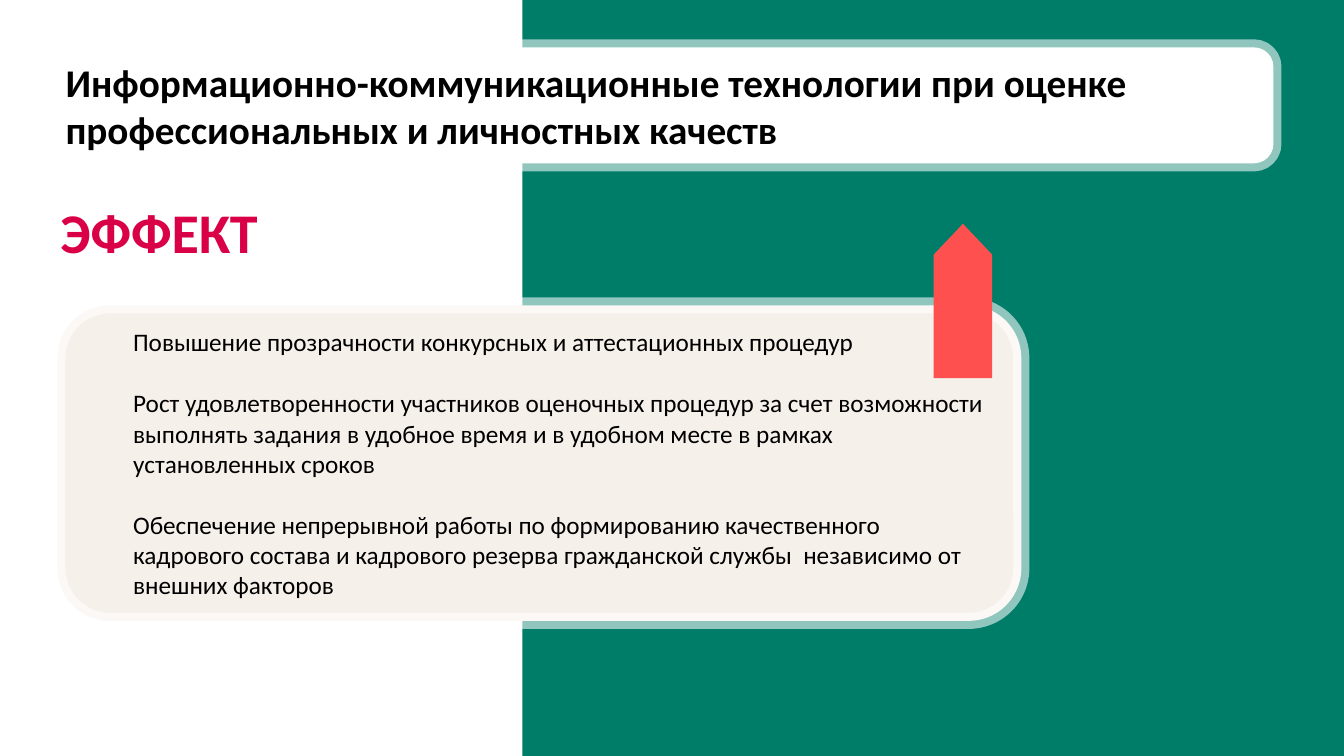
import pptx
import pptx.util
import pptx.dml.color
import pptx.enum.shapes
import pptx.enum.text
from lxml import etree

# Content
TITLE = ("Информационно-коммуникационные технологии при оценке "
         "профессиональных и личностных качеств")
LABEL = "ЭФФЕКТ"
EFFECTS = [
    "Повышение прозрачности конкурсных и аттестационных процедур",
    "Рост удовлетворенности участников оценочных процедур за счет возможности "
    "выполнять задания в удобное время и в удобном месте в рамках установленных сроков",
    "Обеспечение непрерывной работы по формированию качественного кадрового состава "
    "и кадрового резерва гражданской службы  независимо от внешних факторов",
]
HEX = {"green": "007D69", "cream": "F6F0EA", "white": "FFFFFF",
       "black": "000000", "pink": "D90048", "red": "FF5050"}
FONT = "Calibri"

# Boxes in inches: left, top, width, height
WIDE, HIGH = 13.33, 7.5
SPLIT = 5.18
PANEL = (SPLIT, 0, WIDE - SPLIT, HIGH)
CARD = (0.57, 3.03, 9.56, 3.13)
HEAD = (0.5, 0.47, 12.13, 1.15)
TAG = (0.5, 1.91, 2.18, 0.77)
ARROW = (9.26, 2.22, 0.58, 1.53)
PAD = 0.15
INDENT = 0.75

Kind = pptx.enum.shapes.MSO_SHAPE
Text = pptx.enum.text


def color(name):
    return pptx.dml.color.RGBColor.from_string(HEX[name])


def place(box):
    return [pptx.util.Inches(n) for n in box]


def inset(box, left, right):
    return box[0] + left, box[1], box[2] - left - right, box[3]


def draw(kind, box, fill, edge=False):
    shape = slide.shapes.add_shape(kind, *place(box))
    shape.shadow.inherit = False
    shape.fill.solid()
    shape.fill.fore_color.rgb = color(fill)
    if edge:
        shape.line.width = pptx.util.Pt(11.5)
        shape.line.color.rgb = color("white")
        tint = shape.line.fill._xPr.find(".//" + pptx.oxml.ns.qn("a:srgbClr"))
        etree.SubElement(tint, pptx.oxml.ns.qn("a:alpha"), val="56000")
    else:
        shape.line.fill.background()
    return shape


def write(shape, box, lines, size, ink, bold=False, gap=0, wrap=True):
    shape.left, shape.top, shape.width, shape.height = place(box)
    frame = shape.text_frame
    frame.text = "\n".join(lines)
    frame.word_wrap = wrap
    frame.auto_size = Text.MSO_AUTO_SIZE.NONE
    frame.vertical_anchor = Text.MSO_ANCHOR.MIDDLE
    frame.margin_left = frame.margin_right = 0
    for i, par in enumerate(frame.paragraphs):
        par.alignment = Text.PP_ALIGN.LEFT
        par.space_before = pptx.util.Pt(gap if i else 0)
        par.font.name, par.font.size = FONT, pptx.util.Pt(size)
        par.font.bold, par.font.color.rgb = bold, color(ink)
        props = par._p.get_or_add_pPr()
        props.set("marL", "0")
        props.set("indent", "0")
        props.insert_element_before(
            pptx.oxml.parse_xml('<a:buNone %s/>' % pptx.oxml.ns.nsdecls("a")),
            "a:tabLst", "a:defRPr", "a:extLst")


deck = pptx.Presentation()
deck.slide_width, deck.slide_height = place((WIDE, HIGH))
slide = deck.slides.add_slide(deck.slide_layouts[1])
title, body = slide.placeholders

# Background panel and rounded cards
draw(Kind.RECTANGLE, PANEL, "green")
draw(Kind.ROUNDED_RECTANGLE, CARD, "cream", edge=True)
draw(Kind.ROUNDED_RECTANGLE, HEAD, "white", edge=True)

# Texts, raised above the cards
for holder in (body, title):
    slide.shapes.element.append(holder.element)
write(body, inset(CARD, INDENT, 0.25), EFFECTS, 18, "black", gap=22)
write(title, inset(HEAD, PAD, PAD), [TITLE], 28, "black", bold=True)
label = slide.shapes.add_textbox(*place(TAG))
write(label, inset(TAG, 0.1, 0.1), [LABEL], 40, "pink", bold=True, wrap=False)

# Upward arrow
arrow = draw(Kind.FLOWCHART_OFFPAGE_CONNECTOR, ARROW, "red")
arrow.rotation = 180

deck.save("out.pptx")
